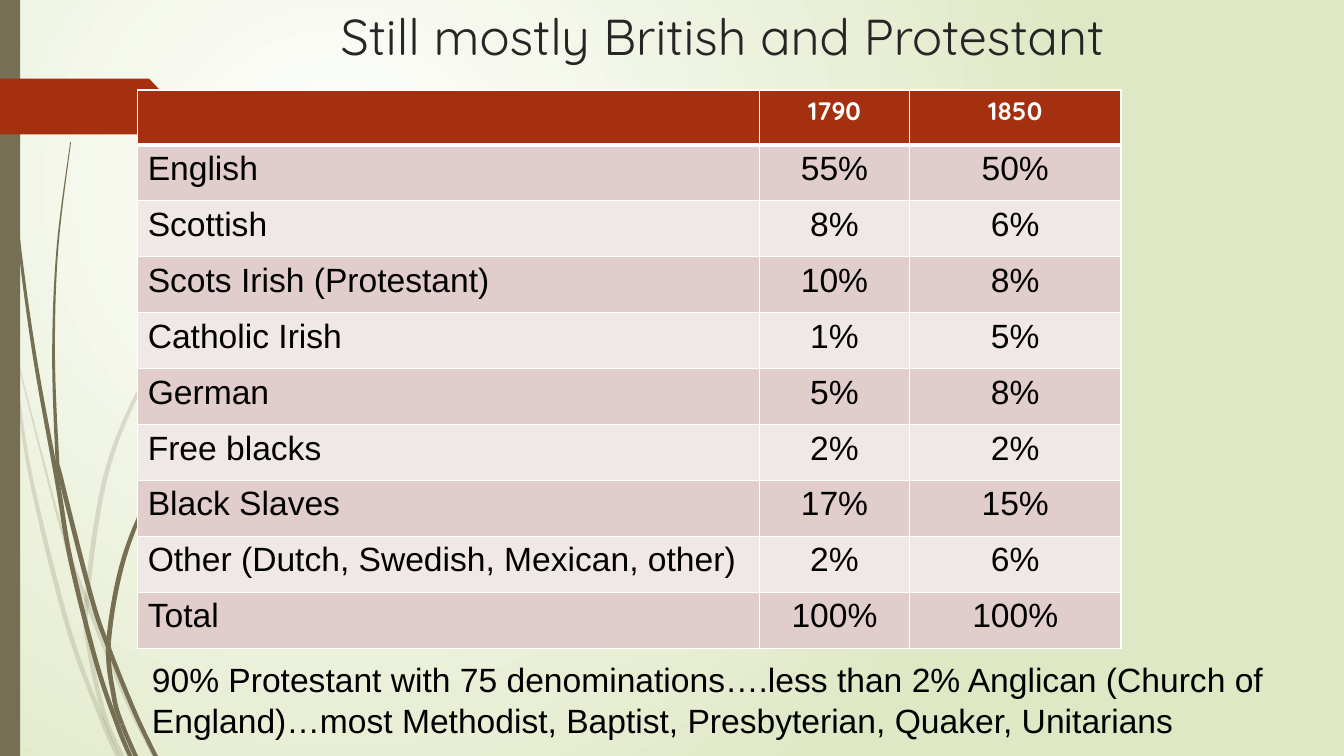
"""Build the slide on the origins of the American population in 1790 and 1850."""
import dataclasses

import lxml.etree
import pptx
import pptx.dml.color
import pptx.enum.shapes
import pptx.enum.text
import pptx.oxml
import pptx.oxml.ns
import pptx.util

Cm = pptx.util.Cm
Align = pptx.enum.text.PP_ALIGN


def rgb(value):
    """Return a colour from its hexadecimal value."""
    return pptx.dml.color.RGBColor.from_string(value)


@dataclasses.dataclass(frozen=True)
class Theme:
    """Hold the colours, fonts and type sizes of the slide."""
    olive: str = "766F54"
    rust: str = "A53010"
    white: str = "FFFFFF"
    leaf: str = "DFE8C4"
    bands: tuple = ("E1CDCC", "F0E8E7")
    title: tuple = (("name", "Quicksand"), ("size", pptx.util.Pt(36)), ("color", "262626"))
    header: tuple = (("name", "Quicksand"), ("size", pptx.util.Pt(18)), ("color", "FFFFFF"),
                     ("bold", True))
    body: tuple = (("name", "Arial"), ("size", pptx.util.Pt(24)), ("color", "000000"),
                   ("bold", False))


THEME = Theme()
TITLE = "Still mostly British and Protestant"
NOTE = ("90% Protestant with 75 denominations….less than 2% Anglican (Church of England)…"
        "most Methodist, Baptist, Presbyterian, Quaker, Unitarians")
ROWS = [
    ("", "1790", "1850"),
    ("English", "55%", "50%"),
    ("Scottish", "8%", "6%"),
    ("Scots Irish (Protestant)", "10%", "8%"),
    ("Catholic Irish", "1%", "5%"),
    ("German", "5%", "8%"),
    ("Free blacks", "2%", "2%"),
    ("Black Slaves", "17%", "15%"),
    ("Other (Dutch, Swedish, Mexican, other)", "2%", "6%"),
    ("Total", "100%", "100%"),
]
COLUMN_WIDTHS = (15.67, 3.78, 5.33)
CURVE_STEPS = 8
PALE_BLADES = [
    ([(0, 7.37), (0.36, 9.22), (0.76, 11.94), (1.7, 15.75), (2.57, 18.14), (2.97, 19.05)],
     (1, 4)),
    ([(0.36, 8.76), (1.52, 13.23), (2.18, 15.14), (3.18, 17.6), (3.89, 19.05)], (2,)),
    ([(7.92, 3.89), (6.81, 5), (5.79, 6.22), (4.04, 8.84), (2.74, 11.71), (2.19, 15.1),
      (2.26, 16.41), (2.64, 18.06), (3.08, 19.05)], (5, 7)),
]
DARK_BLADES = [
    ([(0.08, 0), (0.19, 2.79), (0.46, 5.92), (0.88, 9.02), (1.45, 12.17), (1.78, 14.12),
      (2.43, 16.71), (2.97, 18.3), (3.28, 19.05)], (4, 7)),
    ([(1.78, 3.58), (1.45, 6.22), (1.35, 8.86), (1.44, 11.46), (1.52, 11.99), (2.29, 15.01),
      (2.74, 16.33), (3.4, 17.96), (3.92, 19.05)], (4, 6)),
    ([(6.6, 8.74), (5.87, 9.49), (5.19, 10.3), (3.99, 12.07), (3.14, 14.01), (2.74, 16.16),
      (2.87, 17.55), (3.08, 18.26), (3.42, 19.05)], (5, 7)),
]


def apply(target, values):
    """Set each named attribute of the target."""
    for name, value in values.items():
        setattr(target, name, value)


def write(frame, text, style, align=Align.LEFT):
    """Write one formatted paragraph into a text frame."""
    para = frame.paragraphs[0]
    para.alignment = align
    span = para.add_run()
    span.text = text
    values = dict(style)
    span.font.color.rgb = rgb(values.pop("color"))
    apply(span.font, values)


def paint(shape, colour):
    """Give a shape a flat fill without line or shadow."""
    shape.shadow.inherit = False
    shape.fill.solid()
    shape.fill.fore_color.rgb = rgb(colour)
    shape.line.fill.background()


def paint_background(page):
    """Fill the page with a round gradient centred at the upper left."""
    fill = page.background.fill
    fill.gradient()
    for stop, colour in zip(fill.gradient_stops, (THEME.white, THEME.leaf)):
        stop.color.rgb = rgb(colour)
    qn = pptx.oxml.ns.qn
    gradient = page.element.find(".//" + qn("a:gradFill"))
    linear = gradient.find(qn("a:lin"))
    circle = lxml.etree.Element(qn("a:path"), {"path": "circle"})
    lxml.etree.SubElement(circle, qn("a:fillToRect"),
                          {"l": "50000", "t": "50000", "r": "100000", "b": "100000"})
    gradient.replace(linear, circle)


def smooth_curve(knots):
    """Return points on a smooth curve through the knots."""
    padded = [knots[0], *knots, knots[-1]]
    points = []
    for a, b, c, d in zip(padded, padded[1:], padded[2:], padded[3:]):
        for step in range(CURVE_STEPS):
            t = step / CURVE_STEPS
            points.append(tuple(
                (2 * q + (r - p) * t + (2 * p - 5 * q + 4 * r - s) * t ** 2
                 + (3 * q - p - 3 * r + s) * t ** 3) / 2
                for p, q, r, s in zip(a, b, c, d)))
    return points + [knots[-1]]


def add_blade(page, knots, joints, alpha=None):
    """Draw a grass blade in pieces that meet at its joints."""
    curve = smooth_curve(knots)
    halves = [0.01 + 0.05 * min(1, 2 * index / len(curve)) for index in range(len(curve))]
    left = [(Cm(x - half), Cm(y)) for (x, y), half in zip(curve, halves)]
    right = [(Cm(x + half), Cm(y)) for (x, y), half in zip(curve, halves)]
    ends = [0, *joints, len(knots) - 1]
    for first, last in zip(ends, ends[1:]):
        piece = slice(first * CURVE_STEPS, last * CURVE_STEPS + 1)
        outline = left[piece] + right[piece][::-1]
        builder = page.shapes.build_freeform(*outline[0])
        builder.add_line_segments(outline[1:], close=True)
        blade = builder.convert_to_shape()
        paint(blade, THEME.olive)
        if alpha:
            qn = pptx.oxml.ns.qn
            colour = blade.element.spPr.find(qn("a:solidFill")).find(qn("a:srgbClr"))
            lxml.etree.SubElement(colour, qn("a:alpha"), {"val": str(alpha * 1000)})


def add_panel(page, kind, left, top, width, height, colour):
    """Add a flat preset shape and return it."""
    panel = page.shapes.add_shape(kind, Cm(left), Cm(top), Cm(width), Cm(height))
    paint(panel, colour)
    return panel


def add_borders(cell, is_header):
    """Draw white borders, with a heavier one below the header."""
    properties = cell._tc.get_or_add_tcPr()
    for side in "LRTB":
        points = 3 if is_header and side == "B" else 1
        properties.append(pptx.oxml.parse_xml(
            f'<a:ln{side} {pptx.oxml.ns.nsdecls("a")} w="{points * 12700}"><a:solidFill>'
            f'<a:srgbClr val="{THEME.white}"/></a:solidFill></a:ln{side}>'))


def add_population_table(page):
    """Add the table of population shares."""
    row_height = Cm(1.41)
    table = page.shapes.add_table(len(ROWS), len(COLUMN_WIDTHS), Cm(3.47), Cm(2.27),
                                  Cm(sum(COLUMN_WIDTHS)), row_height * len(ROWS)).table
    for column, width in zip(table.columns, COLUMN_WIDTHS):
        column.width = Cm(width)
    for r, values in enumerate(ROWS):
        table.rows[r].height = row_height if r else Cm(1.38)
        for c, text in enumerate(values):
            cell = table.cell(r, c)
            add_borders(cell, r == 0)
            cell.fill.solid()
            cell.fill.fore_color.rgb = rgb(THEME.bands[(r - 1) % 2] if r else THEME.rust)
            if text:
                write(cell.text_frame, text, THEME.body if r else THEME.header,
                      Align.CENTER if c else Align.LEFT)


def main():
    """Build and save the deck."""
    deck = pptx.Presentation()
    apply(deck, {"slide_width": Cm(33.87), "slide_height": Cm(19.05)})
    page = deck.slides.add_slide(deck.slide_layouts[5])
    paint_background(page)
    for blades, alpha in ((PALE_BLADES, 20), (DARK_BLADES, None)):
        for knots, joints in blades:
            add_blade(page, knots, joints, alpha)
    kinds = pptx.enum.shapes.MSO_SHAPE
    add_panel(page, kinds.RECTANGLE, 0, 0, 0.51, 19.05, THEME.olive)
    banner = add_panel(page, kinds.PENTAGON, 0, 1.98, 4.42, 1.41, THEME.rust)
    banner.adjustments[0] = 0.47

    title = page.shapes.title
    apply(title, {"left": Cm(8.33), "top": Cm(0), "width": Cm(24.77), "height": Cm(2.46)})
    frame_format = {"word_wrap": True, "auto_size": pptx.enum.text.MSO_AUTO_SIZE.NONE,
                    "vertical_anchor": pptx.enum.text.MSO_ANCHOR.TOP}
    apply(title.text_frame, frame_format)
    write(title.text_frame, TITLE, THEME.title)

    add_population_table(page)
    box = page.shapes.add_textbox(Cm(3.58), Cm(16.49), Cm(29.69), Cm(2.31))
    apply(box.text_frame, frame_format)
    write(box.text_frame, NOTE, THEME.body)
    deck.save("out.pptx")


if __name__ == "__main__":
    main()
